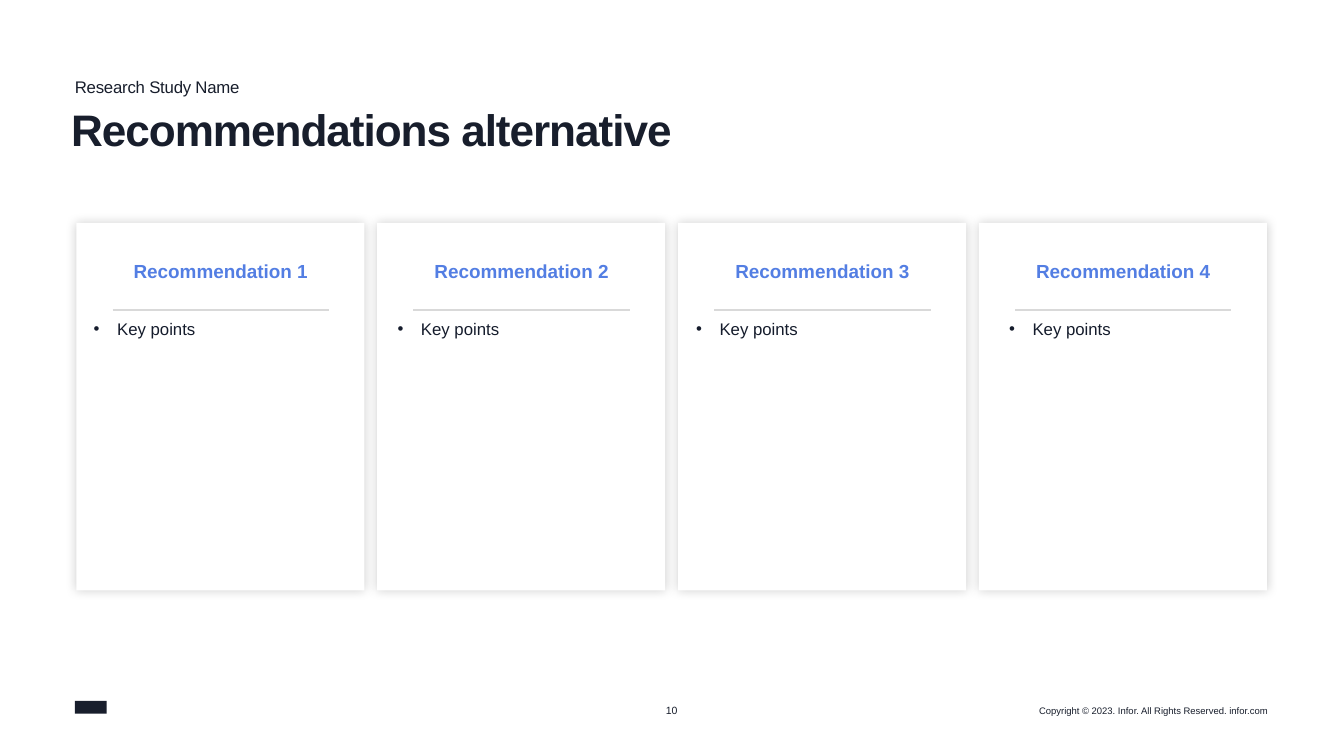
from dataclasses import dataclass

import lxml.etree
import pptx
import pptx.dml.color
import pptx.enum.shapes
import pptx.enum.text
import pptx.oxml.ns
import pptx.util

Inches = pptx.util.Inches
Pt = pptx.util.Pt
Align = pptx.enum.text.PP_ALIGN
Anchor = pptx.enum.text.MSO_ANCHOR
qn = pptx.oxml.ns.qn


@dataclass(frozen=True)
class Theme:
    font: str = "Arial"
    ink: str = "181E2C"
    body_ink: str = "151C2C"
    accent: str = "537EE3"
    rule: str = "D9D9D9"
    card: str = "FFFFFF"
    shadow: str = "000000"
    title_size: int = 42
    heading_size: int = 18
    body_size: int = 16
    number_size: int = 10
    footer_size: int = 9


@dataclass(frozen=True)
class Recommendation:
    heading: str
    points: str
    points_left: float
    points_width: float


THEME = Theme()
CARD_LEFT, CARD_TOP, CARD_WIDTH, CARD_HEIGHT = 1.01, 2.95, 3.81, 4.86
CARD_PITCH = 3.98
RULE_INSET, RULE_WIDTH, RULE_TOP = 0.48, 2.86, 4.1
RECOMMENDATIONS = [
    Recommendation("Recommendation 1", "Key points", 1.24, 3.35),
    Recommendation("Recommendation 2", "Key points", 5.26, 3.26),
    Recommendation("Recommendation 3", "Key points", 9.21, 3.34),
    Recommendation("Recommendation 4", "Key points", 13.35, 3.02),
]


def rgb(value: str) -> pptx.dml.color.RGBColor:
    return pptx.dml.color.RGBColor.from_string(value)


def place(shape, left: float, top: float, width: float, height: float) -> None:
    shape.left, shape.top = Inches(left), Inches(top)
    shape.width, shape.height = Inches(width), Inches(height)


def write(box, text: str, size: float, color: str, bold: bool = False,
          align=Align.LEFT, anchor=Anchor.TOP, wrap: bool = True,
          inset: bool = False, tracking: float = 0):
    """Fill a box with one formatted paragraph; tracking is in points."""
    frame = box.text_frame
    frame.text = text
    frame.auto_size = pptx.enum.text.MSO_AUTO_SIZE.NONE
    frame.word_wrap = wrap
    frame.vertical_anchor = anchor
    if not inset:
        frame.margin_left = frame.margin_right = 0
        frame.margin_top = frame.margin_bottom = 0
    para = frame.paragraphs[0]
    para.alignment = align
    span = para.runs[0]
    span.font.name = THEME.font
    span.font.size = Pt(size)
    span.font.bold = bold
    span.font.color.rgb = rgb(color)
    if tracking:
        span.font._element.set("spc", str(round(tracking * 100)))
    return para


def add_text(page, left: float, top: float, width: float, height: float,
             text: str, size: float, color: str, **style):
    box = page.shapes.add_textbox(
        Inches(left), Inches(top), Inches(width), Inches(height))
    return write(box, text, size, color, **style)


def add_rectangle(page, left: float, top: float, width: float, height: float,
                  color: str):
    shape = page.shapes.add_shape(
        pptx.enum.shapes.MSO_SHAPE.RECTANGLE,
        Inches(left), Inches(top), Inches(width), Inches(height))
    shape.shadow.inherit = False
    shape.fill.solid()
    shape.fill.fore_color.rgb = rgb(color)
    shape.line.fill.background()
    return shape


def add_glow_shadow(shape) -> None:
    """Give the shape a soft shadow spreading evenly on all sides."""
    effects = shape._element.spPr.find(qn("a:effectLst"))
    shadow = lxml.etree.SubElement(
        effects, qn("a:outerShdw"), blurRad=str(Pt(10)), dist="0", dir="0",
        algn="ctr", rotWithShape="0")
    color = lxml.etree.SubElement(shadow, qn("a:srgbClr"), val=THEME.shadow)
    lxml.etree.SubElement(color, qn("a:alpha"), val="20000")


def add_rule(page, left: float, top: float, width: float) -> None:
    rule = page.shapes.add_connector(
        pptx.enum.shapes.MSO_CONNECTOR.STRAIGHT,
        Inches(left), Inches(top), Inches(left + width), Inches(top))
    rule.line.color.rgb = rgb(THEME.rule)
    rule.line.width = Pt(2)
    lxml.etree.SubElement(rule._element.spPr, qn("a:effectLst"))


def add_bullet(para, indent: float) -> None:
    properties = para._p.get_or_add_pPr()
    properties.set("marL", str(Inches(indent)))
    properties.set("indent", str(-Inches(indent)))
    lxml.etree.SubElement(properties, qn("a:buFont"), typeface=THEME.font)
    lxml.etree.SubElement(properties, qn("a:buChar"), char="•")


def add_recommendation(page, index: int, item: Recommendation) -> None:
    left = CARD_LEFT + index * CARD_PITCH
    card = add_rectangle(page, left, CARD_TOP, CARD_WIDTH, CARD_HEIGHT, THEME.card)
    add_glow_shadow(card)
    points = add_text(page, item.points_left, 4.22, item.points_width, 3.05,
                      item.points, THEME.body_size, THEME.body_ink)
    points.space_after = Pt(2)
    add_bullet(points, 0.31)
    add_rule(page, left + RULE_INSET, RULE_TOP, RULE_WIDTH)
    heading = add_text(page, left + RULE_INSET, 3.39, RULE_WIDTH, 0.4,
                       item.heading, THEME.heading_size, THEME.accent,
                       bold=True, align=Align.CENTER, inset=True)
    heading.space_after = Pt(2)


def add_header(page) -> None:
    title = page.shapes.title
    place(title, 0.94, 1.44, 15.81, 1.2)
    para = write(title, "Recommendations alternative", THEME.title_size,
                 THEME.ink, bold=True, tracking=-1)
    para.line_spacing = 0.9
    study = add_text(page, 0.99, 1, 15.79, 0.23, "Research Study Name",
                     THEME.body_size, THEME.ink, tracking=-0.2)
    study.line_spacing = 1.05


def add_footer(page) -> None:
    add_rectangle(page, 0.99, 9.27, 0.42, 0.17, THEME.ink)
    add_text(page, 8.8, 9.31, 0.17, 0.17, "10", THEME.number_size, THEME.ink,
             align=Align.CENTER, anchor=Anchor.MIDDLE, wrap=False)
    add_text(page, 13.69, 9.32, 3.08, 0.15,
             "Copyright © 2023. Infor. All Rights Reserved. infor.com",
             THEME.footer_size, THEME.ink, align=Align.RIGHT,
             anchor=Anchor.MIDDLE, wrap=False)


def main() -> None:
    deck = pptx.Presentation()
    deck.slide_width, deck.slide_height = Inches(17.78), Inches(10)
    page = deck.slides.add_slide(deck.slide_layouts.get_by_name("Title Only"))
    add_header(page)
    for index, item in enumerate(RECOMMENDATIONS):
        add_recommendation(page, index, item)
    add_footer(page)
    deck.save("out.pptx")


if __name__ == "__main__":
    main()
